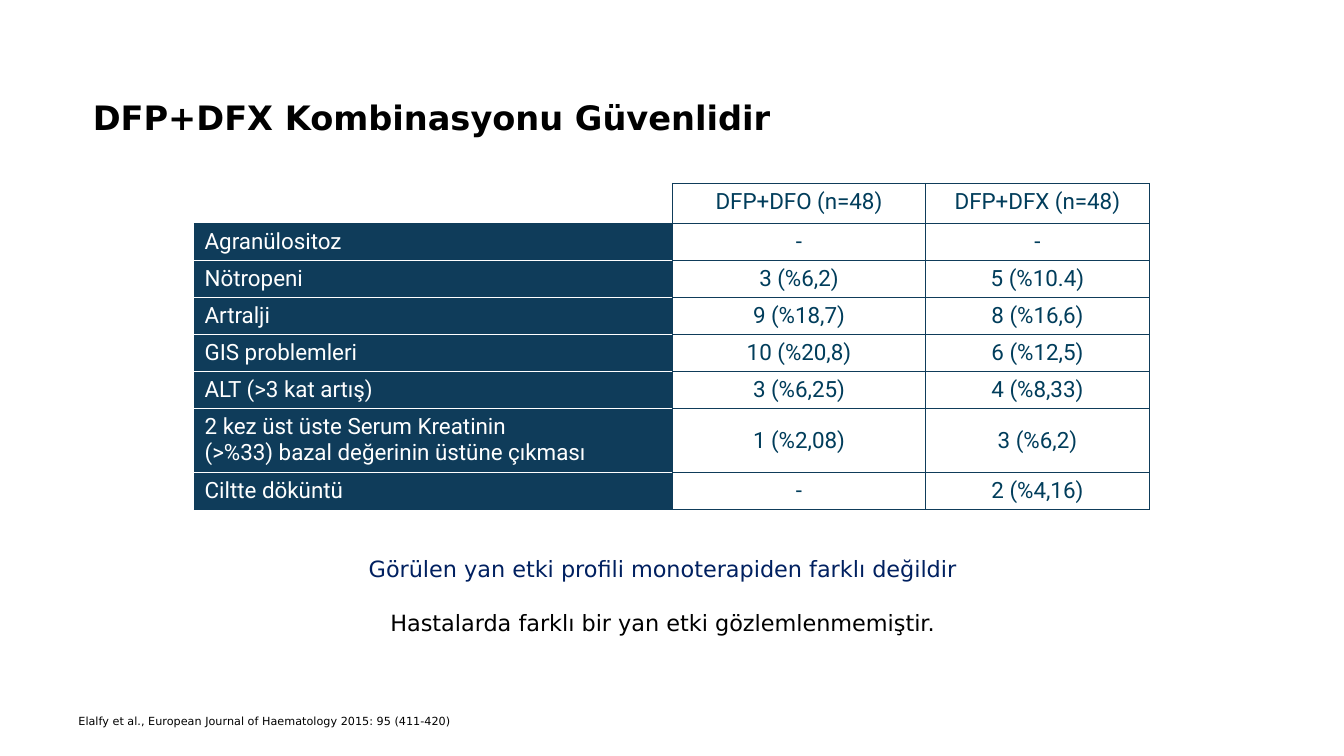
from lxml.etree import SubElement
from pptx import Presentation
from pptx.dml.color import RGBColor
from pptx.enum.text import MSO_ANCHOR as Anchor, PP_ALIGN as Align
from pptx.oxml.ns import qn
from pptx.util import Inches, Pt

NAVY = RGBColor(0x0F, 0x3C, 0x5A)
TEAL = RGBColor(0x01, 0x3D, 0x5B)
BLUE = RGBColor(0x00, 0x20, 0x60)
BLACK = RGBColor(0x00, 0x00, 0x00)
WHITE = RGBColor(0xFF, 0xFF, 0xFF)

COLUMN_WIDTHS = [4.74, 2.51, 2.22]
ROW_HEIGHTS = [0.4] + [0.36] * 5 + [0.61, 0.36]
ROWS = [
    ("", "DFP+DFO (n=48)", "DFP+DFX (n=48)"),
    ("Agranülositoz", "-", "-"),
    ("Nötropeni", "3 (%6,2)", "5 (%10.4)"),
    ("Artralji", "9 (%18,7)", "8 (%16,6)"),
    ("GIS problemleri", "10 (%20,8)", "6 (%12,5)"),
    ("ALT (>3 kat artış)", "3 (%6,25)", "4 (%8,33)"),
    ("2 kez üst üste Serum Kreatinin\n(>%33) bazal değerinin üstüne çıkması", "1 (%2,08)", "3 (%6,2)"),
    ("Ciltte döküntü", "-", "2 (%4,16)"),
]


def write_paragraph(paragraph, text, font_format, alignment=Align.LEFT):
    paragraph.alignment = alignment
    run = paragraph.add_run()
    run.text = text
    color = font_format["color"]
    for name, value in font_format.items():
        if name != "color":
            setattr(run.font, name, value)
    run.font.color.rgb = color


def add_border(cell, side, color, width):
    """Draw one cell border; call before filling, in the order L, R, T, B."""
    line = SubElement(cell._tc.get_or_add_tcPr(), qn(f"a:ln{side}"), w=str(Pt(width)))
    fill = SubElement(line, qn("a:solidFill"))
    SubElement(fill, qn("a:srgbClr"), val=str(color))


presentation = Presentation()
presentation.slide_width = Inches(13.33)
presentation.slide_height = Inches(7.5)
slide = presentation.slides.add_slide(presentation.slide_layouts[1])
title, body = slide.placeholders
citation = slide.shapes.add_textbox(0, 0, 0, 0)

# Text frames
for shape, anchor, box in [
    (title, Anchor.MIDDLE, (0.82, 0.91, 11.66, 0.5)),
    (body, Anchor.TOP, (1.36, 5.46, 10.43, 0.91)),
    (citation, Anchor.TOP, (0.68, 7.05, 4.36, 0.22)),
]:
    shape.left, shape.top, shape.width, shape.height = map(Inches, box)
    shape.text_frame.word_wrap = True
    shape.text_frame.vertical_anchor = anchor

write_paragraph(
    title.text_frame.paragraphs[0],
    "DFP+DFX Kombinasyonu Güvenlidir",
    {"name": "DejaVu Sans", "size": Pt(24), "bold": True, "color": BLACK},
)

first, second = body.text_frame.paragraphs[0], body.text_frame.add_paragraph()
for paragraph, text, color, gap in [
    (first, "Görülen yan etki profili monoterapiden farklı değildir", BLUE, 0),
    (second, "Hastalarda farklı bir yan etki gözlemlenmemiştir.", BLACK, 19),
]:
    font_format = {"name": "DejaVu Sans", "size": Pt(16), "color": color}
    write_paragraph(paragraph, text, font_format, Align.CENTER)
    paragraph.space_before = Pt(gap)
    properties = paragraph._p.get_or_add_pPr()
    properties.set("marL", "0")
    properties.set("indent", "0")
    SubElement(properties, qn("a:buNone"))

source = citation.text_frame.paragraphs[0]
source.line_spacing = 0.9
write_paragraph(
    source,
    "Elalfy et al., European Journal of Haematology 2015: 95 (411-420)",
    {"name": "DejaVu Sans", "size": Pt(8), "color": BLACK},
)

# Side-effect table
table = slide.shapes.add_table(
    len(ROWS), len(COLUMN_WIDTHS), Inches(1.93), Inches(1.82),
    Inches(sum(COLUMN_WIDTHS)), Inches(sum(ROW_HEIGHTS)),
).table
table.first_row = table.horz_banding = False
for column, width in zip(table.columns, COLUMN_WIDTHS):
    column.width = Inches(width)
for row, height in zip(table.rows, ROW_HEIGHTS):
    row.height = Inches(height)

last_row = len(ROWS) - 1
for row_index, texts in enumerate(ROWS):
    for column_index, text in enumerate(texts):
        cell = table.cell(row_index, column_index)
        is_corner = row_index == column_index == 0
        is_label = column_index == 0 and row_index > 0
        inner_color = WHITE if is_label else NAVY
        corner_color = WHITE if is_corner else NAVY

        add_border(cell, "L", corner_color, 1)
        add_border(cell, "R", NAVY, 1)
        if row_index <= 1:
            add_border(cell, "T", corner_color, 1)
        else:
            add_border(cell, "T", inner_color, 0.5)
        if row_index in (0, last_row):
            add_border(cell, "B", NAVY, 1)
        else:
            add_border(cell, "B", inner_color, 0.5)

        if is_label:
            cell.fill.solid()
            cell.fill.fore_color.rgb = NAVY
        else:
            cell.fill.background()
        if is_corner:
            continue

        cell.vertical_anchor = Anchor.MIDDLE if row_index and column_index else Anchor.TOP
        font_format = {"name": "Roboto", "size": Pt(16), "color": WHITE if is_label else TEAL}
        alignment = Align.LEFT if is_label else Align.CENTER
        for line_index, line in enumerate(text.split("\n")):
            frame = cell.text_frame
            paragraph = frame.add_paragraph() if line_index else frame.paragraphs[0]
            write_paragraph(paragraph, line, font_format, alignment)

presentation.save("out.pptx")
